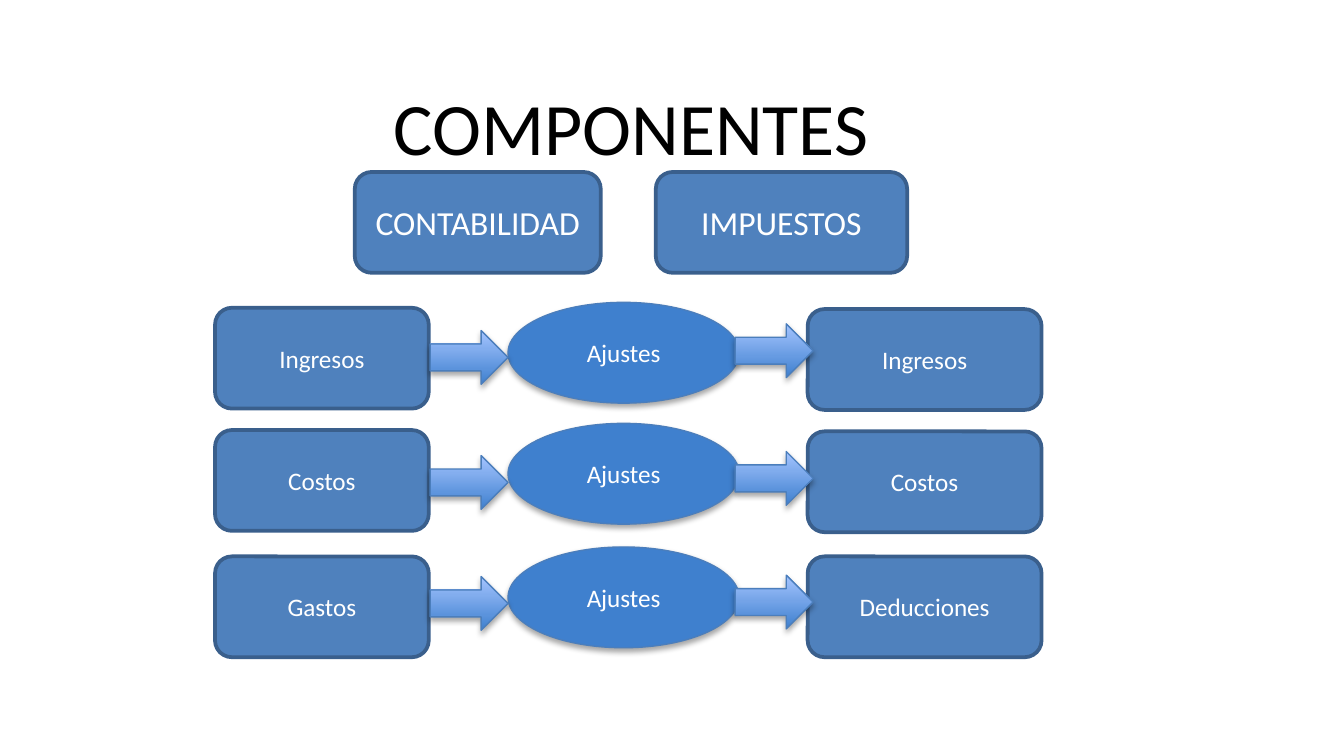
from lxml import etree
from pptx import Presentation
from pptx.dml.color import RGBColor
from pptx.enum.shapes import MSO_SHAPE
from pptx.enum.text import MSO_ANCHOR, PP_ALIGN
from pptx.oxml.ns import qn
from pptx.util import Emu, Pt

BOX, OVAL, ARROW = MSO_SHAPE.ROUNDED_RECTANGLE, MSO_SHAPE.OVAL, MSO_SHAPE.RIGHT_ARROW
CENTER, MIDDLE = PP_ALIGN.CENTER, MSO_ANCHOR.MIDDLE
PX = 9144  # EMU per px, 100 px to the inch
SLIDE_W = 1000
FONT = "Calibri"
COLORS = {
    "box": "4F81BD", "box_line": "3A5F8C",
    "deep": "3F80CE", "light": "A4C4FF", "step_line": "4B7EBC",
    "black": "000000", "white": "FFFFFF",
}

# Content
TITLE = "COMPONENTES"
HEADERS = [("CONTABILIDAD", 264, 183), ("IMPUESTOS", 488, 187)]  # text, left, width
ADJUSTMENT = "Ajustes"
ACCOUNTING = ["Ingresos", "Costos", "Gastos"]
TAXES = ["Ingresos", "Costos", "Deducciones"]

# Columns: left, width, top of each row
ITEM_H, ARROW_H = 75, 40
ACCOUNTING_COL = (160, 159, (229, 320, 414))
TAX_COL = (601, 174, (230, 321, 414))
OVAL_COL = (378, 172, (225, 315, 407))
ARROW_COLS = [(320, 58, (246, 339, 429)), (547, 58, (241, 336, 428))]


def rgb(name):
    return RGBColor.from_string(COLORS[name])


def write(shape, text, size=13.5, color="white"):
    tf = shape.text_frame
    tf.word_wrap = True
    tf.vertical_anchor = MIDDLE
    p = tf.paragraphs[0]
    p.alignment = CENTER
    r = p.add_run()
    r.text = text
    r.font.name, r.font.size = FONT, Pt(size)
    r.font.color.rgb = rgb(color)


def add_shape(kind, x, y, w, h, fill, line, line_pt):
    sp = s.shapes.add_shape(kind, *(Emu(v * PX) for v in (x, y, w, h)))
    sp.shadow.inherit = False
    sp.fill.solid()
    sp.fill.fore_color.rgb = rgb(fill)
    sp.line.color.rgb = rgb(line)
    sp.line.width = Pt(line_pt)
    return sp


def add_box(text, x, y, w, **fmt):
    write(add_shape(BOX, x, y, w, ITEM_H, "box", "box_line", 2), text, **fmt)


def add_step(kind, x, y, w, h):
    """Add a shape with a soft shadow below it."""
    sp = add_shape(kind, x, y, w, h, "deep", "step_line", 0.75)
    effects = sp._element.spPr.find(qn("a:effectLst"))
    shadow = etree.SubElement(effects, qn("a:outerShdw"), blurRad=str(Pt(3.1)),
                              dist=str(Pt(1.8)), dir="5400000", rotWithShape="0")
    color = etree.SubElement(shadow, qn("a:srgbClr"), val=COLORS["black"])
    etree.SubElement(color, qn("a:alpha"), val="35000")
    return sp


prs = Presentation()
prs.slide_width = Emu(SLIDE_W * PX)
prs.slide_height = Emu(SLIDE_W * PX * 9 // 16)
s = prs.slides.add_slide(prs.slide_layouts[6])

# Title and headers
title = s.shapes.add_textbox(*(Emu(v * PX) for v in (227, 54, 485, 80)))
write(title, TITLE, size=39.6, color="black")
for text, x, w in HEADERS:
    add_box(text, x, 128, w, size=18)

# Accounting and tax items
for items, (x, w, tops) in ((ACCOUNTING, ACCOUNTING_COL), (TAXES, TAX_COL)):
    for text, y in zip(items, tops):
        add_box(text, x, y, w)

# Adjustments
x, w, tops = OVAL_COL
for y in tops:
    write(add_step(OVAL, x, y, w, ITEM_H), ADJUSTMENT)

# Arrows, dark at the bottom and light at the top
for x, w, tops in ARROW_COLS:
    for y in tops:
        fill = add_step(ARROW, x, y, w, ARROW_H).fill
        fill.gradient()
        fill.gradient_angle = 90
        for stop, name, position in zip(fill.gradient_stops, ("deep", "light"), (0, 1)):
            stop.color.rgb = rgb(name)
            stop.position = position

prs.save("out.pptx")
